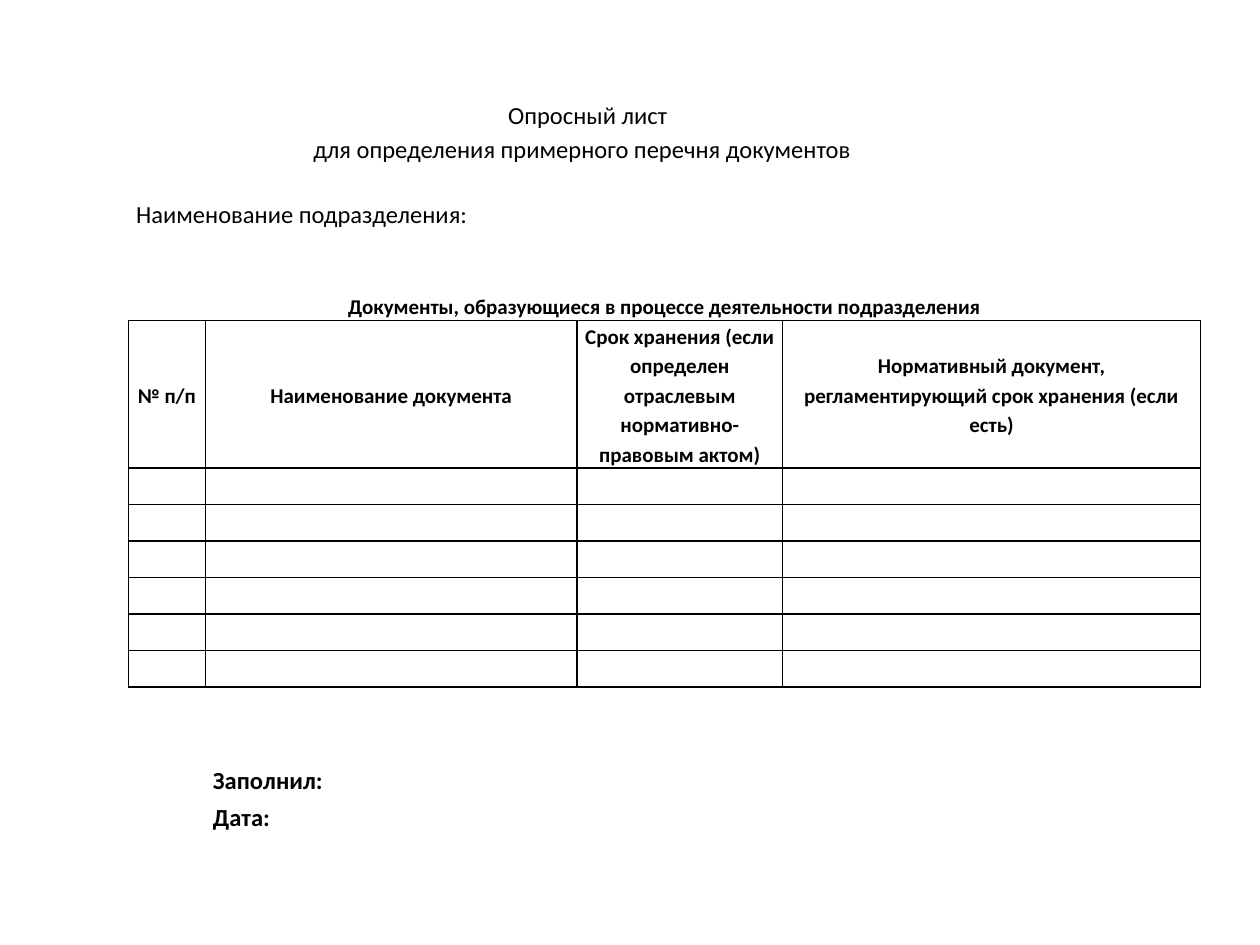
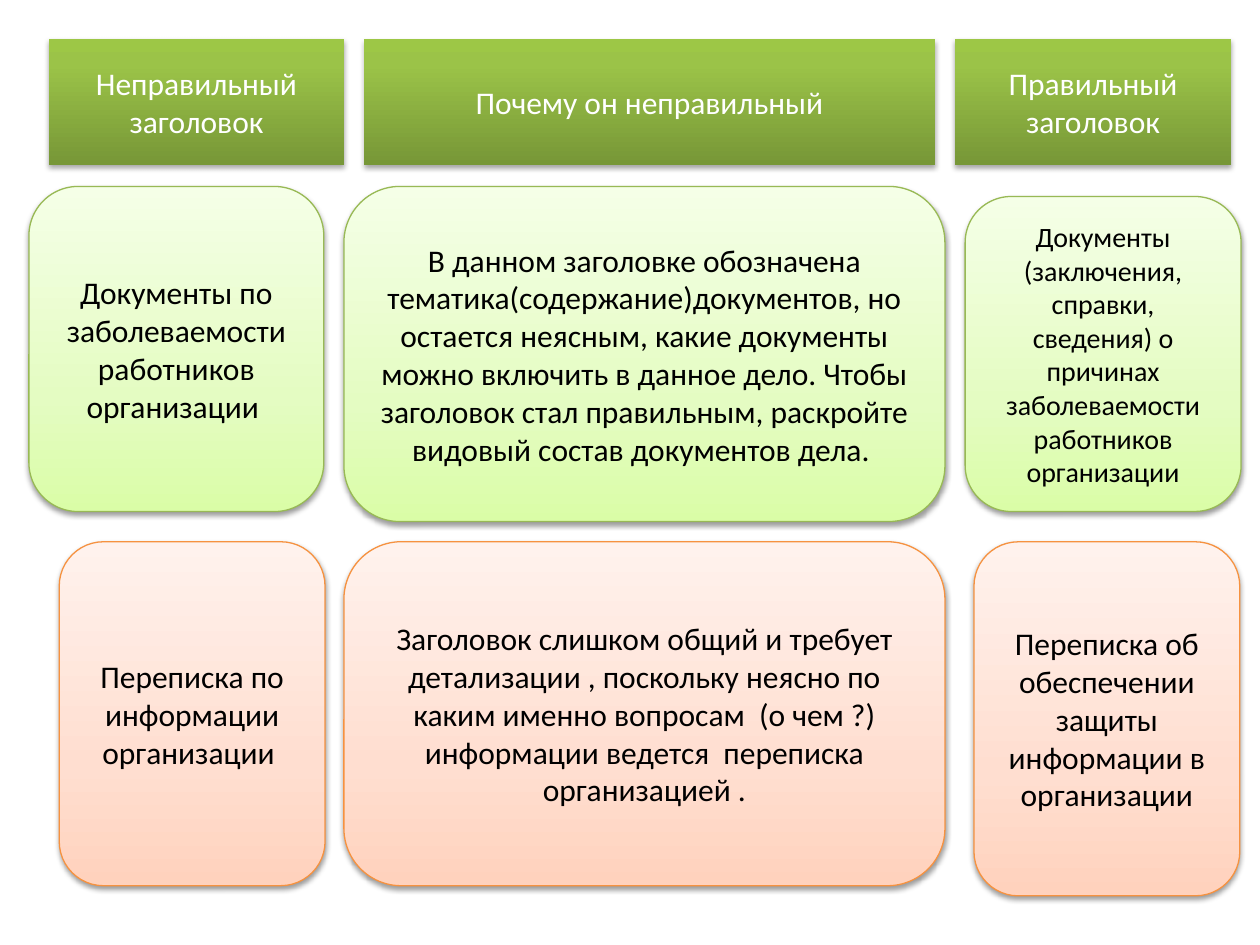
from dataclasses import dataclass
from lxml.etree import SubElement
from pptx import Presentation
from pptx.dml.color import RGBColor
from pptx.enum.shapes import MSO_SHAPE
from pptx.enum.text import MSO_ANCHOR, PP_ALIGN
from pptx.oxml.ns import qn
from pptx.util import Inches, Pt


@dataclass(frozen=True)
class Theme:
    font: str = "Calibri"
    ink: str = "000000"
    paper: str = "FFFFFF"
    green: tuple = ((0, "779737"), (80, "9BC348"), (100, "9DC746"))
    lime: tuple = ((0, "DAFDA7"), (35, "E4FCC2"), (100, "F5FFE7"))
    peach: tuple = ((0, "FFD2BD"), (35, "FFDED0"), (100, "FFF2ED"))
    leaf: str = "98B955"
    orange: str = "F69240"
    cell: int = 12
    form: int = 14
    small: int = 16
    body: int = 18
    edge: float = 0.75
    rule: int = 1


class Deck:
    def __init__(self, theme):
        self.theme = theme
        self.show = Presentation()
        self.show.slide_width = Inches(10)
        self.show.slide_height = Inches(7.5)
        self.slide = None

    def page(self):
        self.slide = self.show.slides.add_slide(self.show.slide_layouts[6])

    def label(self, frame, text, size, color, align, bold=False, space=None):
        frame.word_wrap = True
        frame.text = text
        for para in frame.paragraphs:
            para.alignment = align
            para.line_spacing = space
            font = para.font
            font.name = self.theme.font
            font.size = Pt(size)
            font.bold = bold
            font.color.rgb = RGBColor.from_string(color)

    def blend(self, shape, stops):
        shape.fill.gradient()
        shape.fill.gradient_angle = 90
        items = shape._element.spPr.find(qn("a:gradFill")).find(qn("a:gsLst"))
        items.clear()
        for spot, color in stops:
            stop = SubElement(items, qn("a:gs"), pos=str(spot * 1000))
            SubElement(stop, qn("a:srgbClr"), val=color)

    def shade(self, shape, dist, alpha):
        shape.shadow.inherit = False
        group = shape._element.spPr.find(qn("a:effectLst"))
        shadow = SubElement(group, qn("a:outerShdw"), blurRad=str(int(Pt(3.1))),
                            dist=str(int(Pt(dist))), dir="5400000", rotWithShape="0")
        color = SubElement(shadow, qn("a:srgbClr"), val=self.theme.ink)
        SubElement(color, qn("a:alpha"), val=str(alpha * 1000))

    def box(self, kind, place, text, stops, color, size, line=None):
        shape = self.slide.shapes.add_shape(kind, *map(Inches, place))
        self.blend(shape, stops)
        if line:
            shape.line.color.rgb = RGBColor.from_string(line)
            shape.line.width = Pt(self.theme.edge)
        else:
            shape.line.fill.background()
        self.shade(shape, *((1.6, 38) if line else (1.8, 35)))
        shape.text_frame.vertical_anchor = MSO_ANCHOR.MIDDLE
        self.label(shape.text_frame, text, size, color, PP_ALIGN.CENTER)

    def head(self, place, text):
        self.box(MSO_SHAPE.RECTANGLE, place, text, self.theme.green,
                 self.theme.paper, self.theme.body)

    def card(self, place, text, stops, line, size):
        self.box(MSO_SHAPE.ROUNDED_RECTANGLE, place, text, stops,
                 self.theme.ink, size, line)

    def table(self, left, top, cols, rows):
        frame = self.slide.shapes.add_table(
            len(rows), len(cols), Inches(left), Inches(top),
            Inches(sum(cols)), Inches(sum(rows)))
        grid = frame.table
        grid.first_row = grid.horz_banding = False
        for col, width in zip(grid.columns, cols):
            col.width = Inches(width)
        for row, height in zip(grid.rows, rows):
            row.height = Inches(height)
        return grid

    def frame(self, cell, sides):
        cell.fill.background()
        props = cell._tc.get_or_add_tcPr()
        for spot, side in enumerate("LRTB"):
            line = SubElement(props, qn("a:ln" + side),
                              w=str(int(Pt(self.theme.rule))))
            if side in sides:
                fill = SubElement(line, qn("a:solidFill"))
                SubElement(fill, qn("a:srgbClr"), val=self.theme.ink)
            else:
                SubElement(line, qn("a:noFill"))
            props.insert(spot, line)

    def fill(self, cell, text, size, align=PP_ALIGN.LEFT,
             anchor=MSO_ANCHOR.BOTTOM, bold=False):
        cell.margin_left = cell.margin_right = Inches(0.06)
        cell.margin_top = cell.margin_bottom = 0
        cell.vertical_anchor = anchor
        self.label(cell.text_frame, text, size, self.theme.ink, align, bold, 1.15)


def form(deck):
    theme = deck.theme
    center, middle = PP_ALIGN.CENTER, MSO_ANCHOR.MIDDLE
    deck.page()
    cols = [0.61, 2.95, 1.63, 2.1, 0.61, 0.61]
    rows = [0.29, 0.29, 0.37, 0.72, 1.17] + [0.29] * 10
    grid = deck.table(1.02, 0.62, cols, rows)
    sides = {3: "B", 11: "T"} | dict.fromkeys(range(4, 11), "LRTB")
    for row in range(len(rows)):
        for col in range(len(cols)):
            cell = grid.cell(row, col)
            deck.frame(cell, sides.get(row, ""))
            deck.fill(cell, "", theme.cell)
    spans = [(0, 0, 1, 3), (2, 0, 2, 5), (3, 0, 3, 5)]
    spans += [(row, 3, row, 5) for row in range(4, 11)]
    for top, left, low, right in spans:
        grid.cell(top, left).merge(grid.cell(low, right))
    deck.fill(grid.cell(0, 0),
              "Опросный лист\nдля определения примерного перечня документов  ",
              theme.form, center, middle)
    deck.fill(grid.cell(2, 0), "Наименование подразделения:", theme.form)
    deck.fill(grid.cell(3, 0),
              "Документы, образующиеся в процессе деятельности подразделения",
              theme.cell, center, bold=True)
    heads = [
        "№ п/п",
        "Наименование документа",
        "Срок хранения (если определен отраслевым нормативно-правовым актом)",
        "Нормативный документ, регламентирующий срок хранения (если есть)",
    ]
    for col, text in enumerate(heads):
        deck.fill(grid.cell(4, col), text, theme.cell, center, middle, True)
    for row, text in enumerate(["Заполнил:", "Дата:"], 13):
        deck.fill(grid.cell(row, 1), text, theme.form, bold=True)


def titles(deck):
    theme = deck.theme
    deck.page()
    heads = [
        (0.39, 2.34, "Неправильный заголовок"),
        (2.89, 4.53, "Почему он неправильный"),
        (7.58, 2.19, "Правильный заголовок"),
    ]
    for left, width, text in heads:
        deck.head((left, 0.31, width, 1), text)
    first = [
        ((0.23, 1.48, 2.34, 2.58), theme.body,
         "Документы по заболеваемости работников организации "),
        ((2.73, 1.48, 4.77, 2.66), theme.body,
         "В данном заголовке обозначена тематика(содержание)документов, но "
         "остается неясным, какие документы можно включить в данное дело. Чтобы "
         "заголовок стал правильным, раскройте видовый состав документов дела. "),
        ((7.66, 1.56, 2.19, 2.5), theme.small,
         "Документы (заключения, справки, сведения) о причинах "
         "заболеваемости работников организации"),
    ]
    second = [
        ((0.47, 4.3, 2.11, 2.73), theme.body,
         "Переписка по информации организации "),
        ((2.73, 4.3, 4.77, 2.73), theme.body,
         "Заголовок слишком общий и требует детализации , поскольку неясно по "
         "каким именно вопросам  (о чем ?) информации ведется  переписка "
         "организацией ."),
        ((7.73, 4.3, 2.11, 2.81), theme.body,
         "Переписка об обеспечении защиты информации в организации"),
    ]
    for cards, stops, line in ((first, theme.lime, theme.leaf),
                               (second, theme.peach, theme.orange)):
        for place, size, text in cards:
            deck.card(place, text, stops, line, size)


def main():
    deck = Deck(Theme())
    form(deck)
    titles(deck)
    deck.show.save("out.pptx")


if __name__ == "__main__":
    main()
